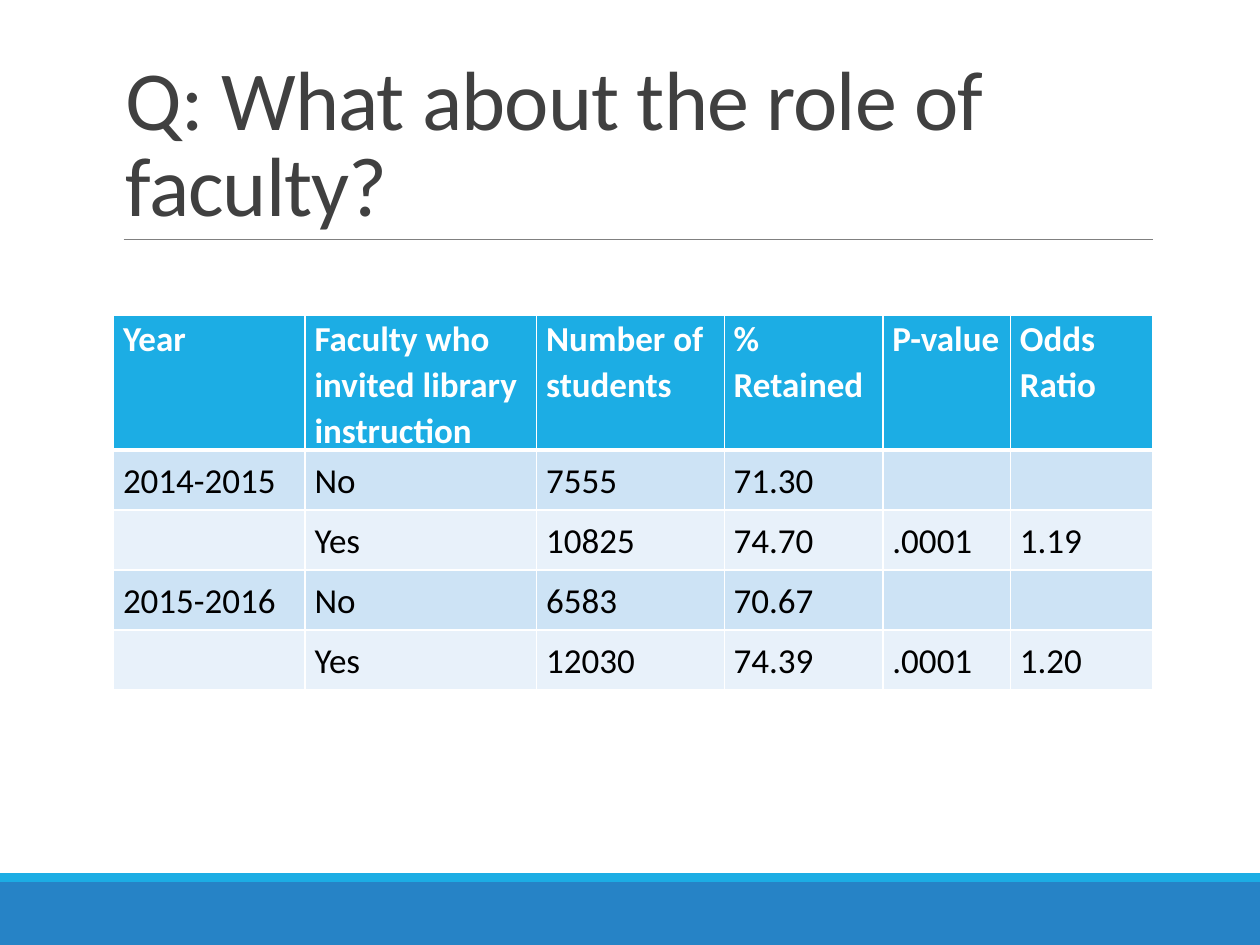
import pptx
import pptx.dml.color
import pptx.enum.shapes
import pptx.enum.text
import pptx.oxml
import pptx.oxml.ns
import pptx.util
from lxml import etree

Cm = pptx.util.Cm
Pt = pptx.util.Pt
qn = pptx.oxml.ns.qn

FONT = "Calibri"
COLORS = {
    "title": "404040",
    "rule": "808080",
    "accent": "1CADE4",
    "footer": "2683C6",
    "band_dark": "CDE3F5",
    "band_light": "E8F1FA",
    "white": "FFFFFF",
    "text": "000000",
}
ROWS = [
    ["Year", "Faculty who invited library instruction", "Number of students",
     "% Retained", "P-value", "Odds Ratio"],
    ["2014-2015", "No", "7555", "71.30", "", ""],
    ["", "Yes", "10825", "74.70", ".0001", "1.19"],
    ["2015-2016", "No", "6583", "70.67", "", ""],
    ["", "Yes", "12030", "74.39", ".0001", "1.20"],
]
COLUMN_WIDTHS = [3.86, 4.67, 3.78, 3.2, 2.57, 2.87]
HEADER_HEIGHT = 2.49
ROW_HEIGHT = 1.21


def color(name):
    return pptx.dml.color.RGBColor.from_string(COLORS[name])


def style_font(font, size, color_name, bold=False):
    font.name = FONT
    font.size = Pt(size)
    font.bold = bold
    font.color.rgb = color(color_name)


def add_bar(slide, left, top, width, height, color_name):
    bar = slide.shapes.add_shape(
        pptx.enum.shapes.MSO_SHAPE.RECTANGLE, Cm(left), Cm(top), Cm(width), Cm(height))
    bar.shadow.inherit = False
    bar.fill.solid()
    bar.fill.fore_color.rgb = color(color_name)
    bar.line.fill.background()


def add_footer(slide, left, top, width, height):
    stripe = 0.18
    add_bar(slide, left, top + stripe, width, height - stripe, "footer")
    add_bar(slide, left, top, width, stripe, "accent")


def add_title(slide, left, top, width, height):
    bottom = top + height
    rule = slide.shapes.add_connector(
        pptx.enum.shapes.MSO_CONNECTOR.STRAIGHT,
        Cm(left + 0.2), Cm(bottom), Cm(left + width), Cm(bottom))
    rule.line.color.rgb = color("rule")
    rule.line.width = Pt(0.5)
    etree.SubElement(rule._element.spPr, qn("a:effectLst"))

    title = slide.shapes.add_textbox(Cm(left), Cm(top), Cm(width), Cm(height))
    frame = title.text_frame
    frame.word_wrap = True
    frame.vertical_anchor = pptx.enum.text.MSO_ANCHOR.BOTTOM
    frame.text = "Q: What about the role of faculty?"
    paragraph = frame.paragraphs[0]
    paragraph.line_spacing = 0.85
    run = paragraph.runs[0]
    style_font(run.font, 48, "title")
    run.font._element.set("spc", "-50")


def set_borders(cell, bottom_width, top_width):
    properties = cell._tc.get_or_add_tcPr()
    widths = {"a:lnL": 1, "a:lnR": 1, "a:lnT": top_width, "a:lnB": bottom_width}
    for position, (tag, width) in enumerate(widths.items()):
        border = etree.Element(qn(tag), w=str(Pt(width)))
        fill = etree.SubElement(border, qn("a:solidFill"))
        etree.SubElement(fill, qn("a:srgbClr"), val=COLORS["white"])
        properties.insert(position, border)


def fill_cell(cell, text, row_index):
    header = row_index == 0
    band = "band_dark" if row_index % 2 else "band_light"
    cell.fill.solid()
    cell.fill.fore_color.rgb = color("accent" if header else band)
    cell.margin_left = cell.margin_right = Cm(0.19)
    cell.margin_top = cell.margin_bottom = 0
    anchors = pptx.enum.text.MSO_ANCHOR
    cell.vertical_anchor = anchors.TOP if header else anchors.MIDDLE
    cell.text_frame.text = text
    paragraph = cell.text_frame.paragraphs[0]
    paragraph.line_spacing = 1.07
    for run in paragraph.runs:
        style_font(run.font, 20, "white" if header else "text", header)
    set_borders(cell, 3 if header else 1, 3 if row_index == 1 else 1)


def add_retention_table(slide, left, top, width, height):
    frame = slide.shapes.add_table(
        len(ROWS), len(COLUMN_WIDTHS), Cm(left), Cm(top), Cm(width), Cm(height))
    table = frame.table
    for column, column_width in zip(table.columns, COLUMN_WIDTHS):
        column.width = Cm(column_width)
    for row_index, values in enumerate(ROWS):
        table.rows[row_index].height = Cm(ROW_HEIGHT if row_index else HEADER_HEIGHT)
        for column_index, text in enumerate(values):
            fill_cell(table.cell(row_index, column_index), text, row_index)


def main():
    presentation = pptx.Presentation()
    presentation.slide_width = Cm(25.4)
    presentation.slide_height = Cm(19.05)
    slide = presentation.slides.add_slide(presentation.slide_layouts[6])
    add_footer(slide, 0, 17.6, 25.4, 1.45)
    add_title(slide, 2.29, 0.79, 20.95, 4.04)
    add_retention_table(slide, 2.29, 6.35, sum(COLUMN_WIDTHS),
                        HEADER_HEIGHT + ROW_HEIGHT * (len(ROWS) - 1))
    presentation.save("out.pptx")


if __name__ == "__main__":
    main()
